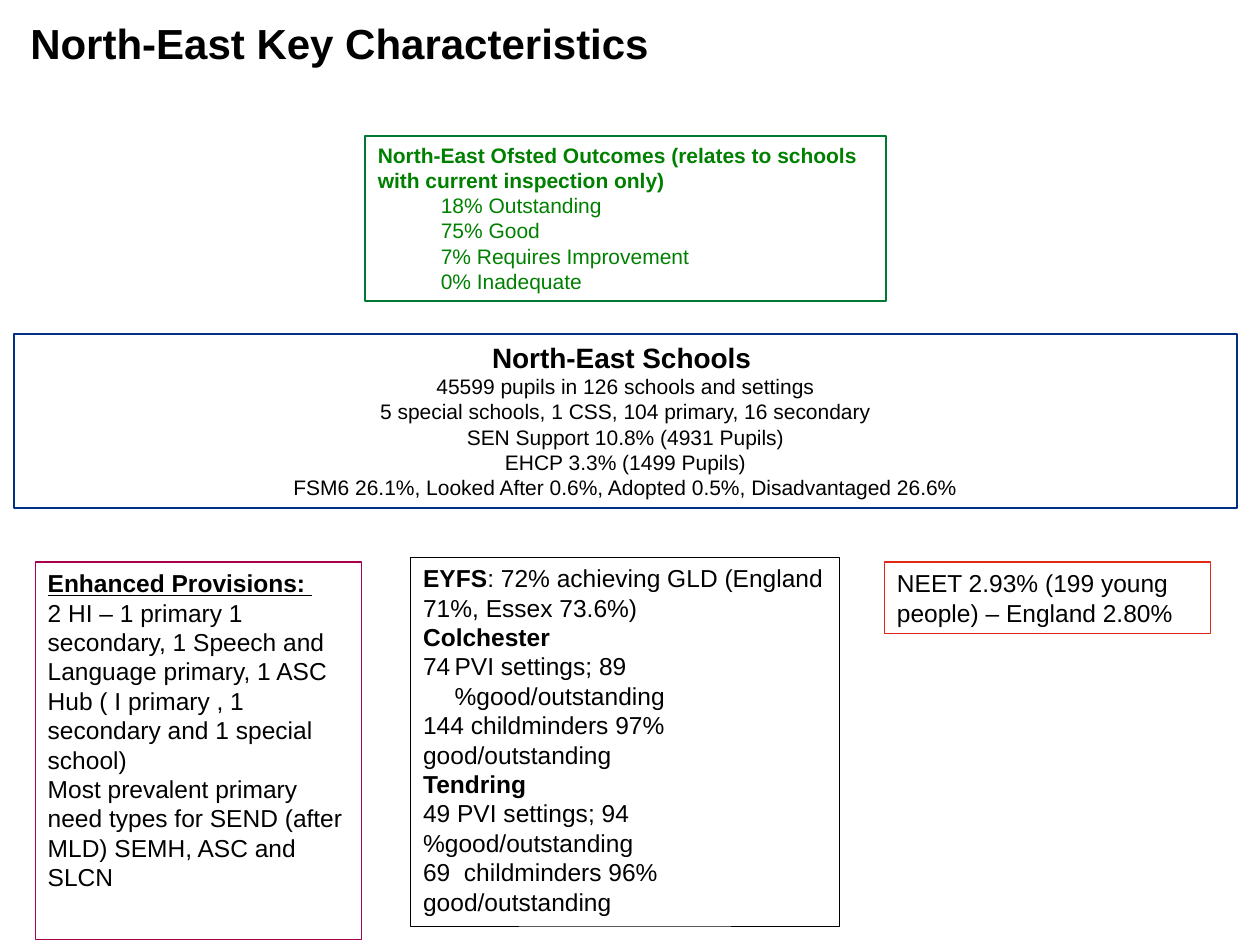
from lxml import etree
from pptx import Presentation
from pptx import util as u
from pptx.dml.color import RGBColor
from pptx.enum import shapes, text

FONT = "Arial"
BLACK, GREEN = "000000", "008000"


def rgb(hex_value):
    return RGBColor.from_string(hex_value)


def set_frame(frame):
    settings = {"word_wrap": True, "auto_size": text.MSO_AUTO_SIZE.NONE,
                "vertical_anchor": text.MSO_ANCHOR.TOP}
    for key, value in settings.items():
        setattr(frame, key, value)


def add_run(paragraph, words, size, color=BLACK, **formats):
    run = paragraph.add_run()
    run.text = words
    run.font.color.rgb = rgb(color)
    for key, value in {"name": FONT, "size": u.Pt(size), "bold": False, **formats}.items():
        setattr(run.font, key, value)


def add_panel(slide, box, line, width):
    """Outlined, unfilled rectangle; returns its text frame."""
    panel = slide.shapes.add_shape(shapes.MSO_SHAPE.RECTANGLE, *map(u.Inches, box))
    panel.shadow.inherit = False
    panel.fill.background()
    panel.line.color.rgb = rgb(line)
    panel.line.width = u.Pt(width)
    set_frame(panel.text_frame)
    return panel.text_frame


def fill_lines(frame, lines, size, color=BLACK, align=text.PP_ALIGN.LEFT):
    """Each line is a list of (words, formats) runs."""
    for index, runs in enumerate(lines):
        paragraph = frame.add_paragraph() if index else frame.paragraphs[0]
        paragraph.alignment = align
        for words, formats in runs:
            add_run(paragraph, words, **{"size": size, "color": color, **formats})


def plain(*lines):
    return [[(line, {})] for line in lines]


def heading(words, **formats):
    return [(words, {"bold": True, **formats})]


def number_from(paragraph, start):
    properties = paragraph._p.get_or_add_pPr()
    indent = u.Inches(0.25)
    properties.set("marL", str(indent))
    properties.set("indent", str(-indent))
    namespace = "{http://schemas.openxmlformats.org/drawingml/2006/main}"
    etree.SubElement(properties, namespace + "buFont", typeface=FONT)
    etree.SubElement(properties, namespace + "buAutoNum",
                     type="arabicPlain", startAt=str(start))


def add_title(slide, box):
    title = slide.shapes.title
    for side, value in zip(("left", "top", "width", "height"), box):
        setattr(title, side, u.Inches(value))
    set_frame(title.text_frame)
    fill_lines(title.text_frame, [heading("North-East Key Characteristics")], 24)


def add_schools(slide, box):
    lines = [heading("North-East Schools ", size=16)] + plain(
        "45599 pupils in 126 schools and settings",
        "5 special schools, 1 CSS, 104 primary, 16 secondary",
        "SEN Support 10.8% (4931 Pupils)",
        "EHCP 3.3% (1499 Pupils)",
        "FSM6 26.1%, Looked After 0.6%, Adopted 0.5%, Disadvantaged 26.6%")
    fill_lines(add_panel(slide, box, "002F85", 1.25), lines, 12, align=text.PP_ALIGN.CENTER)


def add_ofsted(slide, box):
    outcomes = ("18% Outstanding", "75% Good", "7% Requires Improvement", "0% Inadequate")
    lines = [heading("North-East Ofsted Outcomes (relates to schools "
                     "with current inspection only)")]
    lines += plain(*("\t" + outcome for outcome in outcomes))
    fill_lines(add_panel(slide, box, "007A33", 1.25), lines, 12, GREEN)


def add_early_years(slide, box):
    lines = [
        heading("EYFS") + [(": 72% achieving GLD (England 71%, Essex 73.6%)", {})],
        heading("Colchester"),
        *plain("PVI settings; 89 %good/outstanding",
               "144 childminders 97% good/outstanding"),
        heading("Tendring"),
        *plain("49 PVI settings; 94 %good/outstanding",
               "69  childminders 96% good/outstanding"),
    ]
    frame = add_panel(slide, box, BLACK, 0.25)
    fill_lines(frame, lines, 14)
    number_from(frame.paragraphs[2], 74)


def add_provisions(slide, box):
    lines = [heading("Enhanced Provisions: ", underline=True)] + plain(
        "2 HI – 1 primary 1 secondary, 1 Speech and Language primary, "
        "1 ASC Hub ( I primary , 1 secondary and 1 special school)",
        "Most prevalent primary need types for SEND (after MLD) SEMH, ASC and SLCN")
    fill_lines(add_panel(slide, box, "A8004F", 0.75), lines, 14)


def add_neet(slide, box):
    lines = plain("NEET 2.93% (199 young people) – England 2.80%")
    fill_lines(add_panel(slide, box, "E1291A", 0.75), lines, 14)


def main():
    deck = Presentation()
    deck.slide_width, deck.slide_height = u.Inches(10), u.Inches(7.5)
    slide = deck.slides.add_slide(deck.slide_layouts[5])  # title only

    # Title and full-width overview
    add_schools(slide, (0.11, 2.65, 9.71, 1.38))
    add_title(slide, (0.14, 0.09, 5.88, 0.42))
    add_ofsted(slide, (2.9, 1.08, 4.13, 1.31))

    # Bottom row
    add_early_years(slide, (3.26, 4.42, 3.4, 2.93))
    add_provisions(slide, (0.28, 4.46, 2.59, 3))
    add_neet(slide, (7.02, 4.46, 2.59, 0.57))

    deck.save("out.pptx")


if __name__ == "__main__":
    main()
